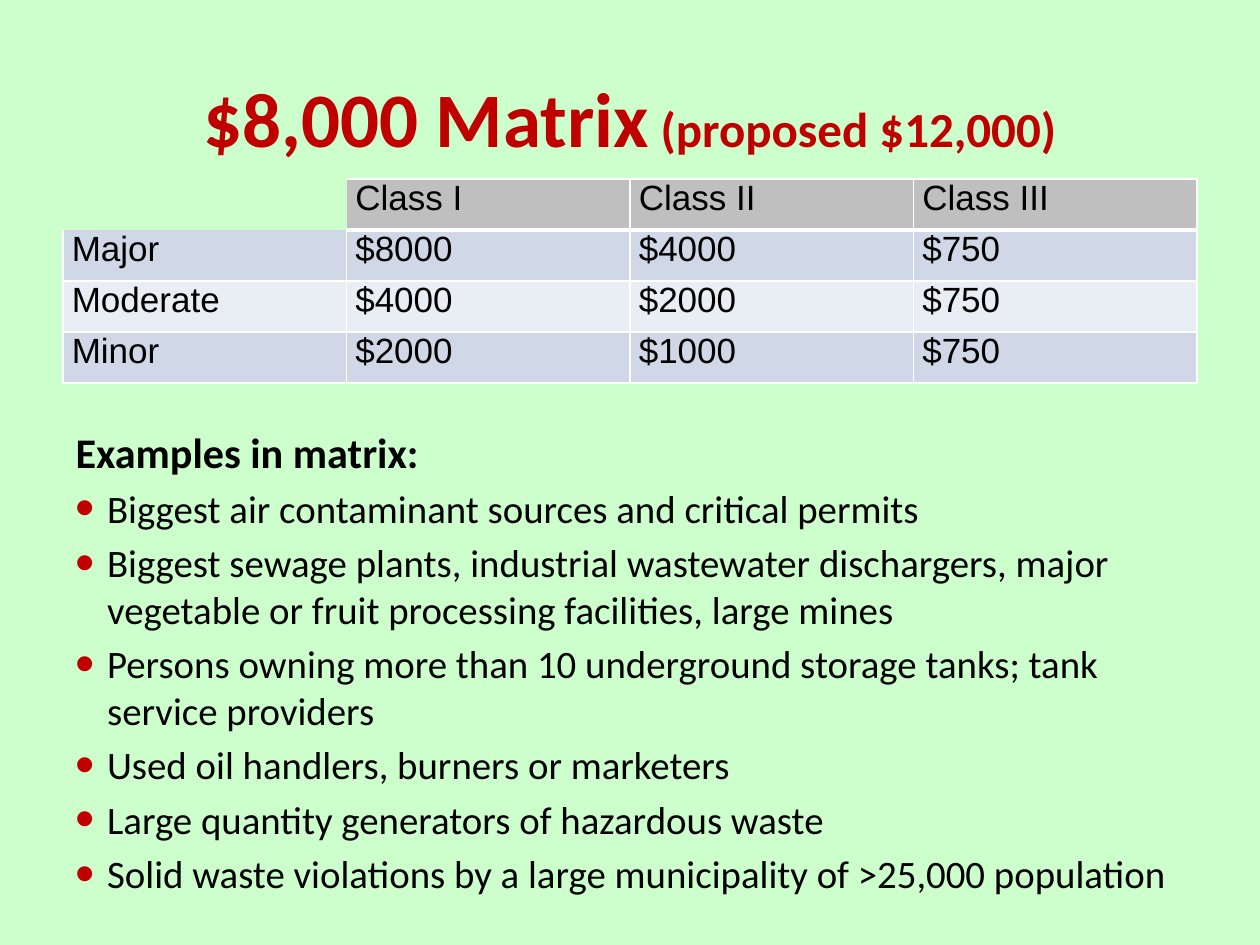
from dataclasses import dataclass

import lxml.etree
import pptx
import pptx.dml.color
import pptx.enum.text
import pptx.oxml.ns
import pptx.presentation
import pptx.slide
import pptx.table
import pptx.text.text
import pptx.util


@dataclass(frozen=True)
class Theme:
    background: str = "CCFFCC"
    accent: str = "C00000"
    text: str = "000000"
    border: str = "FFFFFF"
    header: str = "BFBFBF"
    bands: tuple[str, str] = ("D0D8E8", "E9EDF4")
    text_font: str = "Calibri"
    table_font: str = "Arial"
    title_size: float = 44
    subtitle_size: float = 28
    heading_size: float = 24.1
    list_size: float = 22.2
    table_size: float = 20
    bullet_percent: int = 142


@dataclass(frozen=True)
class Area:
    left: float
    top: float
    width: float
    height: float


@dataclass(frozen=True)
class Style:
    size: float
    color: str
    font: str
    bold: bool = False


THEME = Theme()
WIDTH = pptx.util.Inches(10)
HEIGHT = pptx.util.Inches(7.5)
TITLE_AREA = Area(0.05, 0.04, 0.9, 1.25 / 7.5)
TABLE_AREA = Area(0.05, 1.42 / 7.5, 0.9, 1.62 / 7.5)
LIST_AREA = Area(0.05, 3.33 / 7.5, 0.9, 3.58 / 7.5)

PENALTIES = (
    ("", "Class I", "Class II", "Class III"),
    ("Major", "$8000", "$4000", "$750"),
    ("Moderate", "$4000", "$2000", "$750"),
    ("Minor", "$2000", "$1000", "$750"),
)
EXAMPLES = (
    "Biggest air contaminant sources and critical permits",
    "Biggest sewage plants, industrial wastewater dischargers, major vegetable or fruit processing facilities, large mines",
    "Persons owning more than 10 underground storage tanks; tank service providers",
    "Used oil handlers, burners or marketers",
    "Large quantity generators of hazardous waste",
    "Solid waste violations by a large municipality of >25,000 population",
)


def rgb(color: str) -> pptx.dml.color.RGBColor:
    return pptx.dml.color.RGBColor.from_string(color)


def bounds(area: Area) -> tuple[int, int, int, int]:
    return (int(area.left * WIDTH), int(area.top * HEIGHT),
            int(area.width * WIDTH), int(area.height * HEIGHT))


def place(shape, area: Area) -> None:
    shape.left, shape.top, shape.width, shape.height = bounds(area)


def add_run(paragraph: pptx.text.text._Paragraph, text: str, style: Style) -> None:
    run = paragraph.add_run()
    run.text = text
    run.font.name = style.font
    run.font.size = pptx.util.Pt(style.size)
    run.font.bold = style.bold
    run.font.color.rgb = rgb(style.color)


def add_element(parent, tag: str, **attributes: str):
    return lxml.etree.SubElement(parent, pptx.oxml.ns.qn(tag), **attributes)


def format_bullet(paragraph: pptx.text.text._Paragraph, bulleted: bool) -> None:
    indent = pptx.util.Inches(0.25)
    properties = paragraph._p.get_or_add_pPr()
    properties.set("marL", str(indent))
    properties.set("indent", str(-indent))
    if not bulleted:
        add_element(properties, "a:buNone")
        return
    color = add_element(properties, "a:buClr")
    add_element(color, "a:srgbClr", val=THEME.accent)
    add_element(properties, "a:buSzPct", val=str(THEME.bullet_percent * 1000))
    add_element(properties, "a:buFont", typeface=THEME.table_font)
    add_element(properties, "a:buChar", char="•")


def set_borders(cell: pptx.table._Cell, widths: dict[str, float]) -> None:
    properties = cell._tc.get_or_add_tcPr()
    for side in "LRTB":
        width = widths.get(side, 0)
        line = add_element(properties, f"a:ln{side}", w=str(pptx.util.Pt(width)))
        if width:
            fill = add_element(line, "a:solidFill")
            add_element(fill, "a:srgbClr", val=THEME.border)
        else:
            add_element(line, "a:noFill")


def border_widths(row: int, column: int) -> dict[str, float]:
    if row == 0 and column == 0:
        return {}
    widths = dict.fromkeys("LRTB", 1.0)
    if row == 0:
        widths["B"] = 3
        if column == 1:
            widths["L"] = 0
    elif row == 1 and column == 0:
        widths["T"] = 0
    return widths


def cell_color(row: int, column: int) -> str:
    if row == 0:
        return THEME.header if column else THEME.background
    return THEME.bands[(row - 1) % 2]


def add_title(slide: pptx.slide.Slide) -> None:
    title = slide.shapes.title
    place(title, TITLE_AREA)
    frame = title.text_frame
    frame.auto_size = pptx.enum.text.MSO_AUTO_SIZE.NONE
    frame.vertical_anchor = pptx.enum.text.MSO_ANCHOR.MIDDLE
    paragraph = frame.paragraphs[0]
    paragraph.alignment = pptx.enum.text.PP_ALIGN.CENTER
    add_run(paragraph, "$8,000 Matrix", Style(THEME.title_size, THEME.accent, THEME.text_font, True))
    add_run(paragraph, " (proposed $12,000)", Style(THEME.subtitle_size, THEME.accent, THEME.text_font, True))


def add_matrix(slide: pptx.slide.Slide) -> None:
    table = slide.shapes.add_table(len(PENALTIES), len(PENALTIES[0]), *bounds(TABLE_AREA)).table
    table.first_row = False
    table.horz_banding = False
    style = Style(THEME.table_size, THEME.text, THEME.table_font)
    for row, labels in enumerate(PENALTIES):
        for column, label in enumerate(labels):
            cell = table.cell(row, column)
            cell.margin_left = cell.margin_right = pptx.util.Inches(0.07)
            cell.margin_top = cell.margin_bottom = 0
            set_borders(cell, border_widths(row, column))
            cell.fill.solid()
            cell.fill.fore_color.rgb = rgb(cell_color(row, column))
            if label:
                add_run(cell.text_frame.paragraphs[0], label, style)


def add_examples(slide: pptx.slide.Slide) -> None:
    body = slide.placeholders[1]
    place(body, LIST_AREA)
    frame = body.text_frame
    frame.auto_size = pptx.enum.text.MSO_AUTO_SIZE.NONE
    heading = frame.paragraphs[0]
    format_bullet(heading, False)
    add_run(heading, "Examples in matrix:", Style(THEME.heading_size, THEME.text, THEME.text_font, True))
    for example in EXAMPLES:
        paragraph = frame.add_paragraph()
        format_bullet(paragraph, True)
        add_run(paragraph, example, Style(THEME.list_size, THEME.text, THEME.text_font))


def main() -> None:
    presentation = pptx.Presentation()
    presentation.slide_width = WIDTH
    presentation.slide_height = HEIGHT
    slide = presentation.slides.add_slide(presentation.slide_layouts[1])
    slide.background.fill.solid()
    slide.background.fill.fore_color.rgb = rgb(THEME.background)
    add_title(slide)
    add_matrix(slide)
    add_examples(slide)
    presentation.save("out.pptx")


if __name__ == "__main__":
    main()
